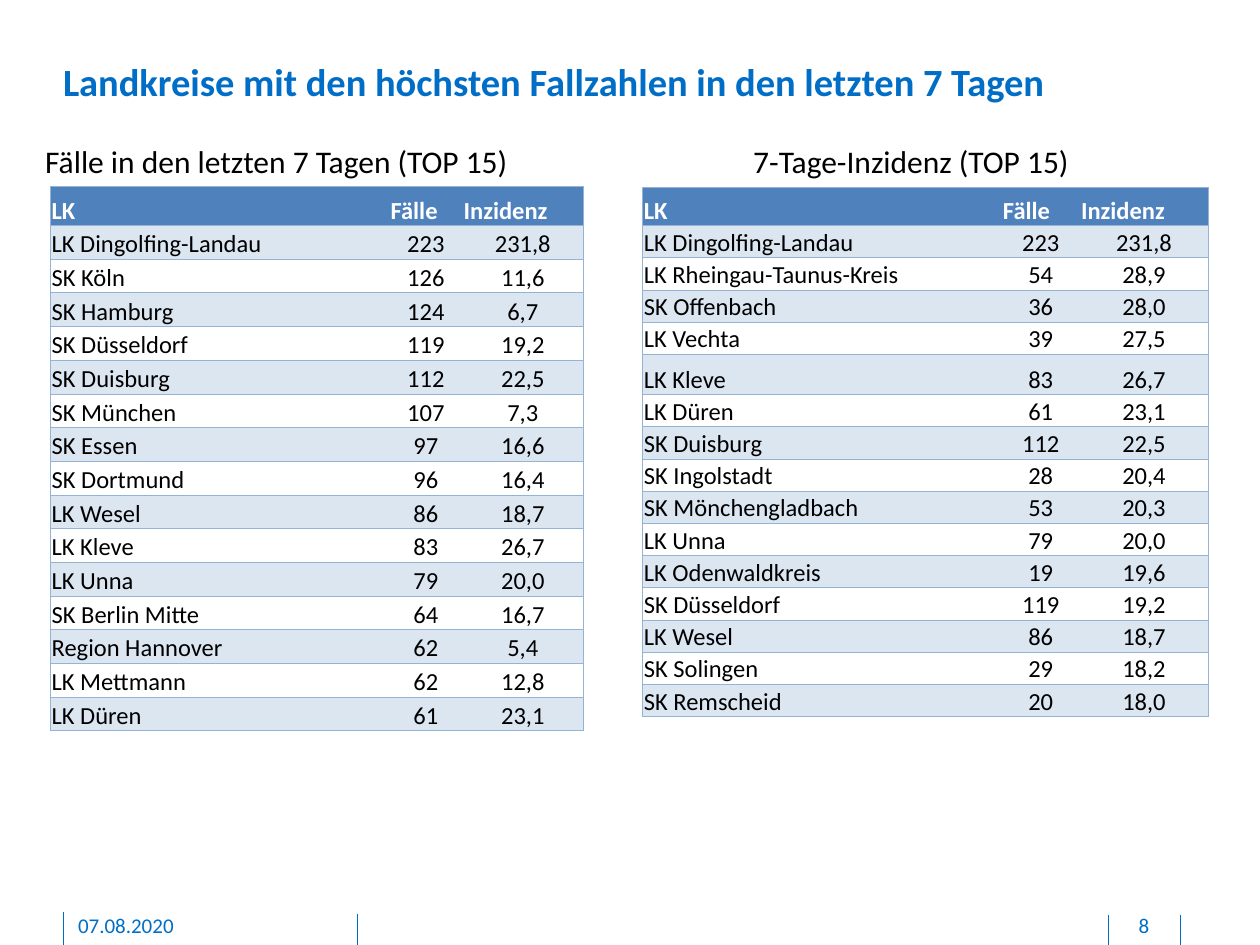
from lxml.etree import SubElement
from pptx import Presentation
from pptx.dml.color import RGBColor
from pptx.enum.shapes import MSO_CONNECTOR
from pptx.enum.text import MSO_ANCHOR as Anchor, MSO_AUTO_SIZE as AutoSize, PP_ALIGN as Align
from pptx.oxml.ns import qn
from pptx.util import Inches, Pt

BLUE = RGBColor(0x00, 0x6E, 0xC7)
BLACK = RGBColor(0x00, 0x00, 0x00)
WHITE = RGBColor(0xFF, 0xFF, 0xFF)
HEADER_FILL = RGBColor(0x4F, 0x81, 0xBD)
BAND_FILL = RGBColor(0xDC, 0xE6, 0xF1)
BORDER = RGBColor(0x95, 0xB3, 0xD7)
PLAIN_TABLE_STYLE = "{2D5ABB26-0587-4C30-8999-92F81FD0307C}"

HEADER = ("LK", "Fälle", "Inzidenz")
TOP_CASES = [
    ("LK Dingolfing-Landau", "223", "231,8"),
    ("SK Köln", "126", "11,6"),
    ("SK Hamburg", "124", "6,7"),
    ("SK Düsseldorf", "119", "19,2"),
    ("SK Duisburg", "112", "22,5"),
    ("SK München", "107", "7,3"),
    ("SK Essen", "97", "16,6"),
    ("SK Dortmund", "96", "16,4"),
    ("LK Wesel", "86", "18,7"),
    ("LK Kleve", "83", "26,7"),
    ("LK Unna", "79", "20,0"),
    ("SK Berlin Mitte", "64", "16,7"),
    ("Region Hannover", "62", "5,4"),
    ("LK Mettmann", "62", "12,8"),
    ("LK Düren", "61", "23,1"),
]
TOP_INCIDENCE = [
    ("LK Dingolfing-Landau", "223", "231,8"),
    ("LK Rheingau-Taunus-Kreis", "54", "28,9"),
    ("SK Offenbach", "36", "28,0"),
    ("LK Vechta", "39", "27,5"),
    ("LK Kleve", "83", "26,7"),
    ("LK Düren", "61", "23,1"),
    ("SK Duisburg", "112", "22,5"),
    ("SK Ingolstadt", "28", "20,4"),
    ("SK Mönchengladbach", "53", "20,3"),
    ("LK Unna", "79", "20,0"),
    ("LK Odenwaldkreis", "19", "19,6"),
    ("SK Düsseldorf", "119", "19,2"),
    ("LK Wesel", "86", "18,7"),
    ("SK Solingen", "29", "18,2"),
    ("SK Remscheid", "20", "18,0"),
]


class SlideBuilder:
    """Holds the slide and the font shared by all its elements."""

    font_name = "Calibri"

    def __init__(self, slide):
        self.slide = slide

    def add_text(self, frame, text, size, color, bold=False, align=Align.LEFT, **frame_format):
        for name, value in frame_format.items():
            setattr(frame, name, value)
        paragraph = frame.paragraphs[0]
        paragraph.alignment = align
        run = paragraph.add_run()
        run.text = text
        for name, value in {"name": self.font_name, "size": Pt(size), "bold": bold}.items():
            setattr(run.font, name, value)
        run.font.color.rgb = color

    def title(self, text, left, top, width, height):
        title = self.slide.shapes.title
        place = {"left": left, "top": top, "width": width, "height": height}
        for name, value in place.items():
            setattr(title, name, Inches(value))
        self.add_text(title.text_frame, text, 22, BLUE, bold=True, margin_left=0,
                      margin_right=0, margin_top=0, margin_bottom=0,
                      vertical_anchor=Anchor.TOP, auto_size=AutoSize.SHAPE_TO_FIT_TEXT)

    def text_box(self, left, top, width, height):
        box = self.slide.shapes.add_textbox(*map(Inches, (left, top, width, height)))
        return box.text_frame

    def caption(self, text, left, width):
        self.add_text(self.text_box(left, 1.08, width, 0.4), text, 18, BLACK,
                      word_wrap=False, auto_size=AutoSize.SHAPE_TO_FIT_TEXT)

    def footer(self, text, left, width, align):
        self.add_text(self.text_box(left, 7.24, width, 0.21), text, 12, BLUE, align=align,
                      margin_left=0, margin_right=0, margin_top=0,
                      margin_bottom=Inches(0.05), word_wrap=True)

    def footer_rule(self, x, top):
        rule = self.slide.shapes.add_connector(
            MSO_CONNECTOR.STRAIGHT, Inches(x), Inches(top), Inches(x), Inches(7.5))
        rule.line.color.rgb = BLUE
        rule.line.width = Pt(0.5)
        SubElement(rule._element.spPr, qn("a:effectLst"))

    def border(self, cell, sides):
        """Draw thin lines on the given sides; the order must be L, R, T, B."""
        properties = cell._tc.get_or_add_tcPr()
        for side in sides:
            line = SubElement(properties, qn(f"a:ln{side}"), w=str(Pt(0.5)))
            fill = SubElement(line, qn("a:solidFill"))
            SubElement(fill, qn("a:srgbClr"), val=str(BORDER))

    def cell(self, cell, text, row, column, last_column):
        is_header = row == 0
        sides = ("L" if column == 0 else "") + ("R" if column == last_column else "") + "TB"
        self.border(cell, sides)
        if is_header or row % 2:
            cell.fill.solid()
            cell.fill.fore_color.rgb = HEADER_FILL if is_header else BAND_FILL
        else:
            cell.fill.background()
        cell_format = {"margin_left": Inches(0.01), "margin_right": Inches(0.01),
                       "margin_top": Inches(0.01), "margin_bottom": 0,
                       "vertical_anchor": Anchor.BOTTOM}
        for name, value in cell_format.items():
            setattr(cell, name, value)
        self.add_text(cell.text_frame, text, 14, WHITE if is_header else BLACK, bold=is_header,
                      align=Align.LEFT if is_header or column == 0 else Align.CENTER)

    def table(self, districts, left, top, height, column_widths, fixed_heights):
        """Rows without a fixed height share the remaining height equally."""
        rows = [HEADER, *districts]
        frame = self.slide.shapes.add_table(
            len(rows), len(HEADER), Inches(left), Inches(top),
            Inches(sum(column_widths)), Inches(height))
        table = frame.table
        table.first_row = table.horz_banding = False
        table._tbl.tblPr.find(qn("a:tableStyleId")).text = PLAIN_TABLE_STYLE
        for column, width in zip(table.columns, column_widths):
            column.width = Inches(width)
        shared = (height - sum(fixed_heights.values())) / (len(rows) - len(fixed_heights))
        for r, values in enumerate(rows):
            table.rows[r].height = Inches(fixed_heights.get(r, shared))
            for c, value in enumerate(values):
                self.cell(table.cell(r, c), value, r, c, len(values) - 1)


def main():
    deck = Presentation()
    deck.slide_width, deck.slide_height = Inches(10), Inches(7.5)
    builder = SlideBuilder(deck.slides.add_slide(deck.slide_layouts[5]))

    for x, top in ((2.84, 7.25), (0.5, 7.24), (9.37, 7.26), (8.8, 7.26)):
        builder.footer_rule(x, top)
    builder.title("Landkreise mit den höchsten Fallzahlen in den letzten 7 Tagen",
                  0.5, 0.46, 8.85, 0.37)
    builder.footer("07.08.2020", 0.62, 2.03, Align.LEFT)
    builder.footer("8", 8.81, 0.54, Align.CENTER)
    builder.caption("7-Tage-Inzidenz (TOP 15)", 5.88, 2.74)
    builder.caption("Fälle in den letzten 7 Tagen (TOP 15)", 0.26, 3.92)
    builder.table(TOP_CASES, 0.4, 1.48, 4.32, (2.69, 0.58, 0.96), {0: 0.31})
    builder.table(TOP_INCIDENCE, 5.1, 1.49, 4.2, (2.85, 0.62, 1.02), {0: 0.3, 5: 0.32})
    deck.save("out.pptx")


if __name__ == "__main__":
    main()
